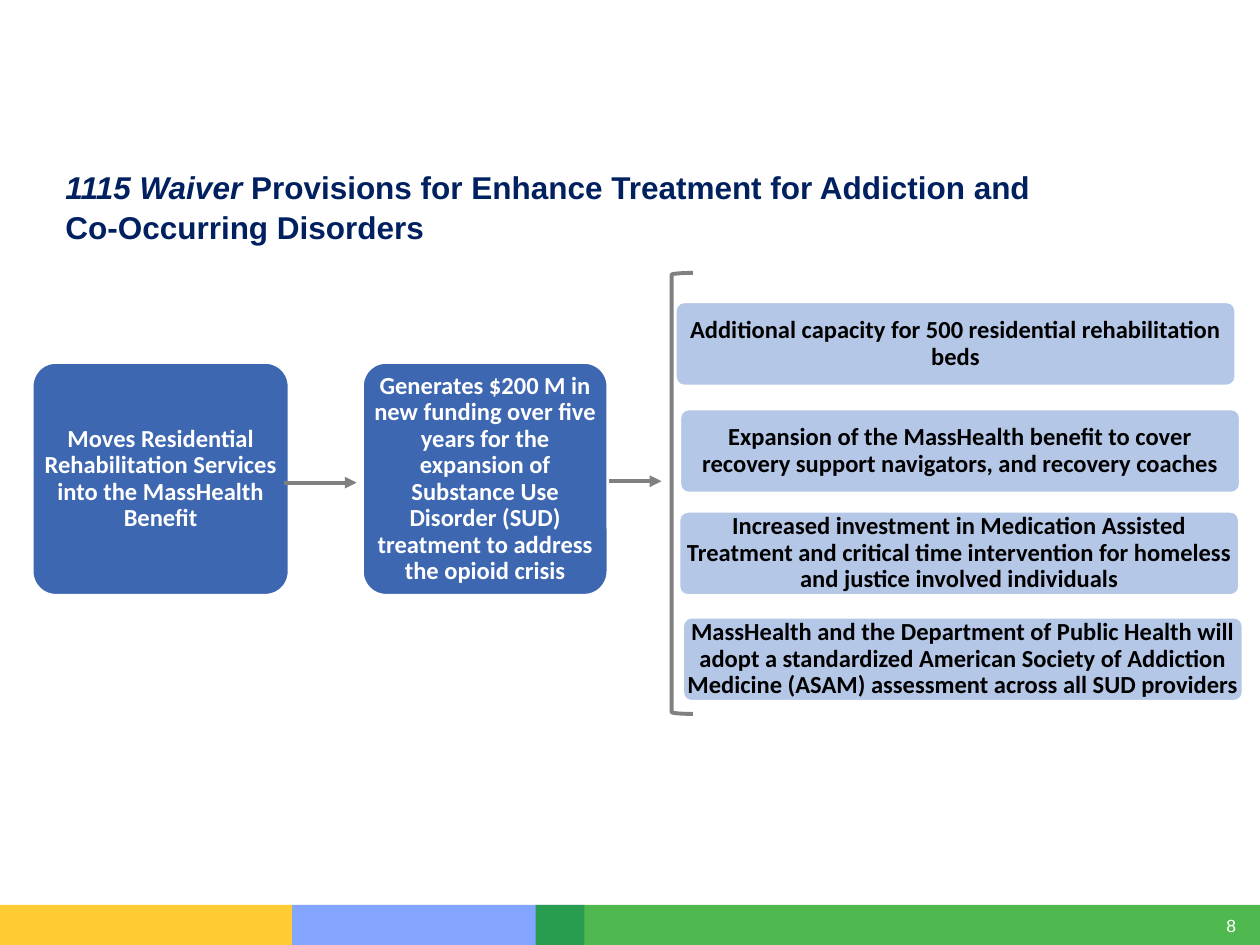
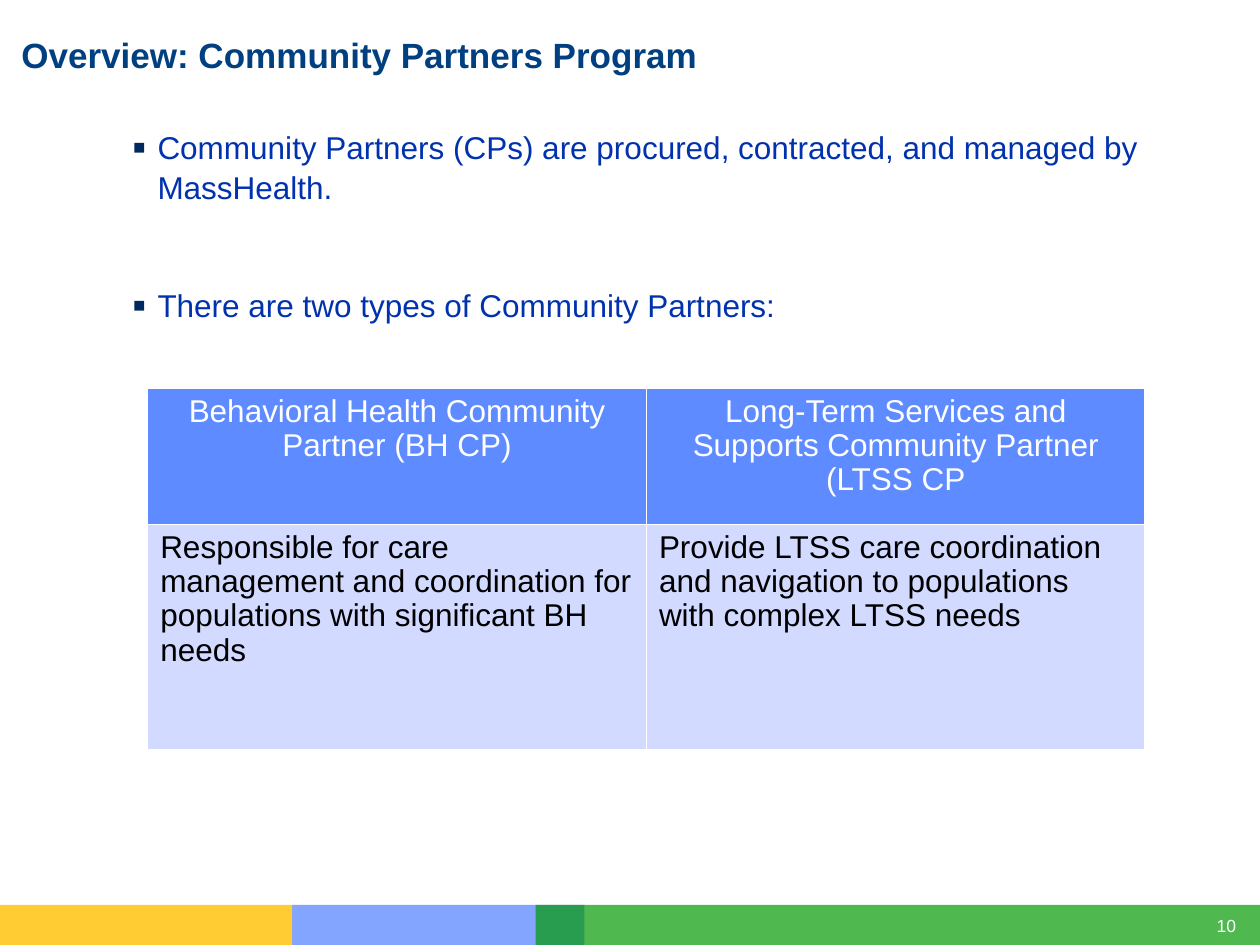
"""Builds two slides on the 1115 Waiver provisions and the Community Partners program."""
from lxml.etree import SubElement
from pptx import Presentation
from pptx.dml.color import RGBColor
from pptx.enum.shapes import MSO_CONNECTOR, MSO_SHAPE
from pptx.enum.text import MSO_ANCHOR, MSO_AUTO_SIZE, PP_ALIGN
from pptx.oxml.ns import qn
from pptx.util import Pt

WHITE = RGBColor(0xFF, 0xFF, 0xFF)
BLACK = RGBColor(0x00, 0x00, 0x00)
YELLOW = RGBColor(0xFF, 0xC0, 0x00)
BLUE = RGBColor(0x5E, 0x8B, 0xFF)
GREEN = RGBColor(0x00, 0x99, 0x00)
STEP_BLUE = RGBColor(0x3E, 0x67, 0xB2)
OUTCOME_BLUE = RGBColor(0xB4, 0xC7, 0xE7)
CELL_BLUE = RGBColor(0xD2, 0xDA, 0xFF)
GREY = RGBColor(0x80, 0x80, 0x80)
NAVY = RGBColor(0x00, 0x20, 0x60)
HEADING_BLUE = RGBColor(0x00, 0x40, 0x80)
LIST_BLUE = RGBColor(0x00, 0x31, 0xAE)
BULLET_NAVY = "00295F"

BANDS = [(167, 167, BLUE, 77), (0, 167, YELLOW, 80), (306, 414, GREEN, 69)]
STEPS = [
    (18.7, 146.2, "Moves Residential Rehabilitation Services into the MassHealth Benefit"),
    (207.4, 139.7, "Generates $200 M in new funding over five years for the expansion of "
                   "Substance Use Disorder (SUD) treatment to address the opioid crisis"),
]
OUTCOMES = [
    (386.2, 172.8, "Additional capacity for 500 residential rehabilitation beds"),
    (388.8, 234, "Expansion of the MassHealth benefit to cover recovery support navigators, "
                 "and recovery coaches"),
    (388.3, 292.5, "Increased investment in Medication Assisted Treatment and critical time "
                   "intervention for homeless and justice involved individuals"),
    (390.4, 353, "MassHealth and the Department of Public Health will adopt a standardized "
                 "American Society of Addiction Medicine (ASAM) assessment across all SUD providers"),
]
ARROWS = [(162, 203.8, 275.8), (347.8, 378, 275)]
PARTNER_FACTS = [
    "Community Partners (CPs) are procured, contracted, and managed by MassHealth.",
    "There are two types of Community Partners:",
]
PARTNER_TYPES = [
    ["Behavioral Health Community Partner (BH CP)",
     "Long-Term Services and Supports Community Partner (LTSS CP"],
    ["Responsible for care management and coordination for populations with significant BH needs",
     "Provide LTSS care coordination and navigation to populations with complex LTSS needs"],
]


def place(shape, left, top, width, height):
    """Move and size a shape, in points."""
    shape.left, shape.top, shape.width, shape.height = map(Pt, (left, top, width, height))


def set_font(font, name, size, color, bold=False):
    """Set the face, size, colour and weight of a font."""
    font.name, font.size, font.bold = name, Pt(size), bold
    font.color.rgb = color


def set_frame(frame, inset_x=0, inset_y=0, anchor=MSO_ANCHOR.TOP, wrap=True):
    """Set the insets, anchor and wrapping of a text frame."""
    frame.margin_left = frame.margin_right = Pt(inset_x)
    frame.margin_top = frame.margin_bottom = Pt(inset_y)
    frame.vertical_anchor, frame.word_wrap = anchor, wrap
    frame.auto_size = MSO_AUTO_SIZE.NONE


def add_filled(slide, kind, bounds, color):
    """Add a plain filled shape without line or shadow."""
    shape = slide.shapes.add_shape(kind, *map(Pt, bounds))
    shape.shadow.inherit = False
    shape.fill.solid()
    shape.fill.fore_color.rgb = color
    shape.line.fill.background()
    return shape


def add_footer(slide, page):
    """Add the translucent footer bands and the page number."""
    for left, width, color, opacity in BANDS:
        band = add_filled(slide, MSO_SHAPE.RECTANGLE, (left, 517, width, 23), color)
        fill_color = band._element.spPr.find(".//" + qn("a:srgbClr"))
        SubElement(fill_color, qn("a:alpha"), val=str(opacity * 1000))
    number = slide.shapes.add_textbox(Pt(676), Pt(522.7), Pt(30.3), Pt(12.2))
    set_frame(number.text_frame, anchor=MSO_ANCHOR.MIDDLE, wrap=False)
    paragraph = number.text_frame.paragraphs[0]
    paragraph.text = page
    paragraph.alignment = PP_ALIGN.RIGHT
    set_font(paragraph.font, "Arial", 10, WHITE)


def set_title(slide, bounds, size, color, text, lead=""):
    """Fill the title placeholder, with an optional italic lead-in."""
    title = slide.shapes.title
    place(title, *bounds)
    set_frame(title.text_frame)
    paragraph = title.text_frame.paragraphs[0]
    if lead:
        opening = paragraph.add_run()
        opening.text, opening.font.italic = lead, True
    paragraph.add_run().text = text
    paragraph.alignment = PP_ALIGN.LEFT
    paragraph.line_spacing = 1.05
    set_font(paragraph.font, "Arial", size, color, bold=True)


def add_card(slide, bounds, fill, text_color, text):
    """Add a rounded card with centred bold text."""
    card = add_filled(slide, MSO_SHAPE.ROUNDED_RECTANGLE, bounds, fill)
    card.adjustments[0] = 0.1
    card.line.color.rgb, card.line.width = WHITE, Pt(1)
    set_frame(card.text_frame, 0.72, 0.72, MSO_ANCHOR.MIDDLE)
    paragraph = card.text_frame.paragraphs[0]
    paragraph.text = text
    paragraph.alignment = PP_ALIGN.CENTER
    paragraph.line_spacing = 0.9
    set_font(paragraph.font, "Calibri", 14, text_color, bold=True)


def add_arrow(slide, start, end, y):
    """Add a horizontal grey arrow."""
    arrow = slide.shapes.add_connector(MSO_CONNECTOR.STRAIGHT, Pt(start), Pt(y), Pt(end), Pt(y))
    arrow.line.color.rgb, arrow.line.width = GREY, Pt(2.25)
    SubElement(arrow.line._get_or_add_ln(), qn("a:tailEnd"), type="triangle")
    SubElement(arrow._element.spPr, qn("a:effectLst"))


def add_bracket(slide, bounds):
    """Add the grey bracket that gathers the outcomes."""
    bracket = slide.shapes.add_shape(MSO_SHAPE.LEFT_BRACKET, *map(Pt, bounds))
    bracket.shadow.inherit = False
    bracket.fill.background()
    bracket.line.color.rgb, bracket.line.width = GREY, Pt(2.25)


def add_bullet(paragraph):
    """Give a paragraph a hanging square bullet."""
    properties = paragraph._p.get_or_add_pPr()
    properties.set("marL", str(Pt(51.1)))
    properties.set("indent", str(Pt(-14.4)))
    bullet_color = SubElement(properties, qn("a:buClr"))
    SubElement(bullet_color, qn("a:srgbClr"), val=BULLET_NAVY)
    SubElement(properties, qn("a:buSzPct"), val="125000")
    SubElement(properties, qn("a:buFont"), typeface="Arial")
    SubElement(properties, qn("a:buChar"), char="▪")


def fill_list(body, bounds, items):
    """Fill the body placeholder with widely spaced bullets."""
    place(body, *bounds)
    set_frame(body.text_frame, 7.2, 3.6)
    body.text_frame.text = "\n".join(items)
    for paragraph in body.text_frame.paragraphs:
        add_bullet(paragraph)
        paragraph.line_spacing = 1.05
        paragraph.space_before = Pt(0)
        paragraph.space_after = Pt(45)
        set_font(paragraph.font, "Arial", 18, LIST_BLUE)


def set_borders(cell):
    """Draw thin white borders around a table cell."""
    properties = cell._tc.get_or_add_tcPr()
    for position, side in enumerate(("lnL", "lnR", "lnT", "lnB")):
        border = properties.makeelement(qn("a:" + side), {"w": str(Pt(1))})
        properties.insert(position, border)
        SubElement(SubElement(border, qn("a:solidFill")), qn("a:srgbClr"), val=str(WHITE))


def add_partner_table(slide, bounds, row_heights):
    """Add the table of partner types under a coloured header."""
    rows, columns = len(PARTNER_TYPES), len(PARTNER_TYPES[0])
    table = slide.shapes.add_table(rows, columns, *map(Pt, bounds)).table
    looks = [(BLUE, WHITE, PP_ALIGN.CENTER), (CELL_BLUE, BLACK, PP_ALIGN.LEFT)]
    for row, height, texts, look in zip(table.rows, row_heights, PARTNER_TYPES, looks):
        row.height = Pt(height)
        fill, text_color, alignment = look
        for cell, text in zip(row.cells, texts):
            cell.fill.solid()
            cell.fill.fore_color.rgb = fill
            set_borders(cell)
            paragraph = cell.text_frame.paragraphs[0]
            paragraph.text, paragraph.alignment = text, alignment
            paragraph.line_spacing = 0.97
            set_font(paragraph.font, "Arial", 18, text_color)


def build_waiver_slide(deck):
    """Build the flow from benefit change to funded outcomes."""
    slide = deck.slides.add_slide(deck.slide_layouts[5])
    add_footer(slide, "8")
    for left, width, text in STEPS:
        add_card(slide, (left, 207.4, width, 132.5), STEP_BLUE, WHITE, text)
    for left, top, text in OUTCOMES:
        add_card(slide, (left, top, 319.7, 47.5), OUTCOME_BLUE, BLACK, text)
    set_title(slide, (37.4, 95, 580.3, 44), 18, NAVY,
              "Provisions for Enhance Treatment for Addiction and Co-Occurring Disorders",
              lead="1115 Waiver ")
    for start, end, y in ARROWS:
        add_arrow(slide, start, end, y)
    add_bracket(slide, (383.8, 156, 12.2, 252))


def build_partners_slide(deck):
    """Build the overview of the partner types."""
    slide = deck.slides.add_slide(deck.slide_layouts[1])
    add_footer(slide, "10")
    set_title(slide, (12.2, 18, 634.3, 24.5), 20, HEADING_BLUE,
              "Overview: Community Partners Program")
    fill_list(slide.placeholders[1], (31.7, 68.4, 651.6, 148.3), PARTNER_FACTS)
    add_partner_table(slide, (84.4, 222, 570, 206.6), (77.8, 128.8))


def main():
    """Build and save the deck."""
    deck = Presentation()
    deck.slide_width, deck.slide_height = Pt(720), Pt(540)
    build_waiver_slide(deck)
    build_partners_slide(deck)
    deck.save("out.pptx")


if __name__ == "__main__":
    main()
